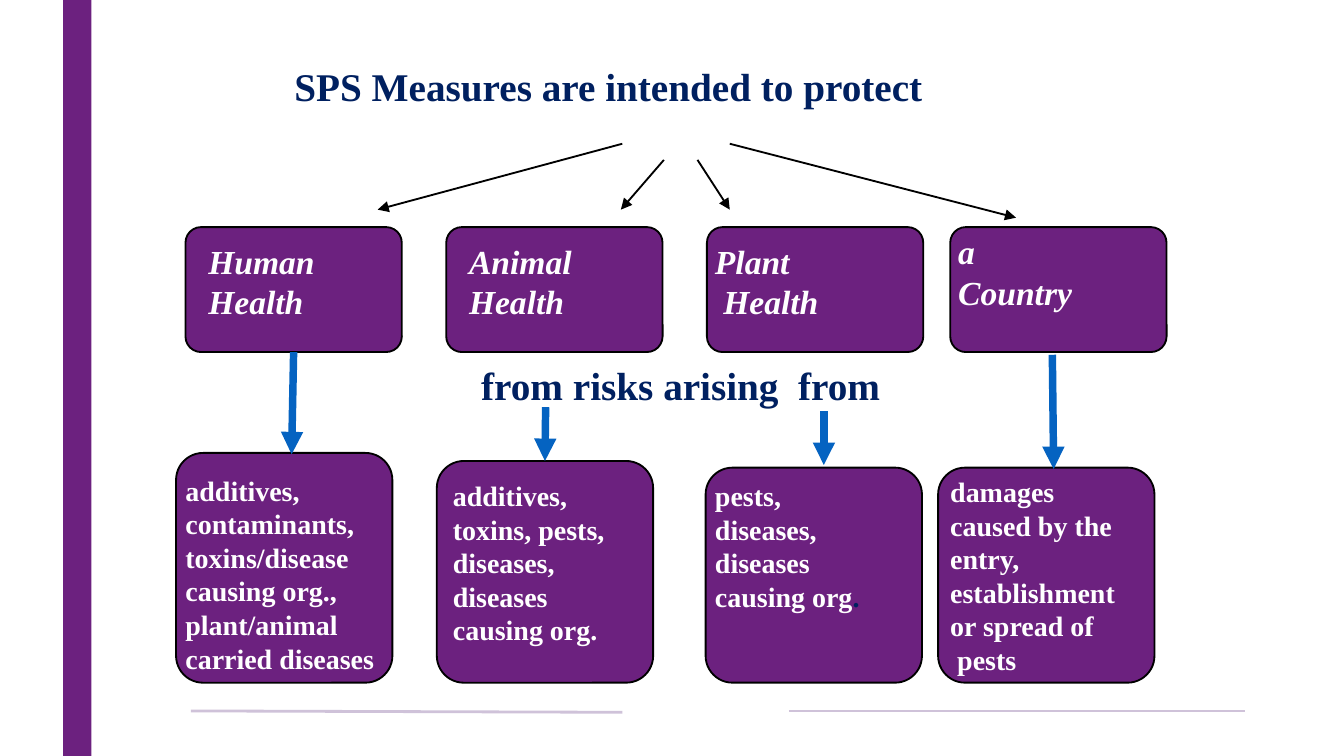
from lxml.etree import SubElement
from pptx import Presentation
from pptx.dml.color import RGBColor
from pptx.enum.shapes import MSO_CONNECTOR as CONN, MSO_SHAPE as SHAPE
from pptx.enum.text import MSO_ANCHOR as ANCHOR, MSO_AUTO_SIZE as FIT, PP_ALIGN as ALIGN
from pptx.oxml.ns import qn
from pptx.util import Inches, Pt

PURPLE, LILAC, BLUE = "6C217F", "CFC2D9", "0563C1"
NAVY, BLACK, WHITE = "002060", "000000", "FFFFFF"

prs = Presentation()
prs.slide_width, prs.slide_height = Inches(10), Inches(5.625)
slide = prs.slides.add_slide(prs.slide_layouts[5])
shapes = slide.shapes
unit = prs.slide_width / 100


def grid(*cells):
    return [round(c * unit) for c in cells]


def color(target, value):
    if hasattr(target, "solid"):
        target.solid()
        target = target.fore_color
    target.rgb = RGBColor.from_string(value)


def write(s, box, paragraphs, size, ink, italic=False):
    s.left, s.top, s.width, s.height = grid(*box)
    tf = s.text_frame
    tf.word_wrap, tf.auto_size, tf.vertical_anchor = True, FIT.NONE, ANCHOR.TOP
    tf.margin_left, tf.margin_right, tf.margin_top, tf.margin_bottom = grid(0.7, 0.7, 0.4, 0.4)
    for i, runs in enumerate(paragraphs):
        p = tf.paragraphs[0] if i == 0 else tf.add_paragraph()
        p.alignment, p.line_spacing = ALIGN.LEFT, Pt(size * 1.2)
        for text, c in runs:
            r = p.add_run()
            r.text = text
            r.font.name, r.font.size = "Times New Roman", Pt(size)
            r.font.bold, r.font.italic = True, italic
            color(r.font.color, c or ink)


def connect(ends, ink, width, arrow=True):
    line = shapes.add_connector(CONN.STRAIGHT, *grid(*ends))
    color(line.line.fill, ink)
    line.line.width = Pt(width)
    if arrow:
        SubElement(line.line._get_or_add_ln(), qn("a:tailEnd"), type="triangle")
    SubElement(line._element.spPr, qn("a:effectLst"))
    return line


bar = shapes.add_shape(SHAPE.RECTANGLE, *grid(4.7, 0, 2.1, 56.25))
bar.shadow.inherit = False
color(bar.fill, PURPLE)
bar.line.fill.background()
connect((46.3, 53, 14.2, 52.9), LILAC, 1.5, False)
connect((58.7, 52.9, 92.6, 52.9), LILAC, 1.5, False)

write(shapes.title, (21.2, 4.2, 73.8, 4.3),
      [[("SPS Measures are intended to protect", None)]], 21, NAVY)

cards = [
    ((13.8, 16.9, 9.3), (14.8, 17.5, 15.8, 6.8), 18, ["Human Health"]),
    ((33.2, 16.9, 9.3), (34.2, 17.5, 13.3, 6.8), 18, ["Animal Health"]),
    ((52.6, 16.9, 9.3), (52.5, 17.5, 16.3, 6.8), 18, ["Plant", " Health"]),
    ((70.7, 16.9, 9.3), (70.6, 16.8, 16.3, 6.8), 18, ["a", "Country"]),
    ((13.1, 33.7, 17.1), (13.1, 34.8, 17.4, 15.9), 15,
     ["additives,", "contaminants,", "toxins/disease causing org.,", "plant/animal carried diseases"]),
    ((32.5, 34.3, 16.5), (33, 35.2, 16.3, 13.4), 15,
     ["additives,", "toxins, pests,", "diseases,", "diseases", "causing org."]),
    ((52.5, 34.8, 16), (52.5, 35.2, 16.3, 10.8), 15,
     ["pests,", "diseases, diseases", "causing org"]),
    ((69.8, 34.8, 16), (70, 34.9, 15.8, 15.9), 15,
     ["damages", "caused by the entry,", "establishment", "or spread of", " pests"]),
]
boxes = []
for (x, y, h), box, size, lines in cards:
    sp = shapes.add_shape(SHAPE.ROUNDED_RECTANGLE, *grid(x, y, 16.1, h))
    sp.shadow.inherit = False
    sp.adjustments[0] = 0.125
    color(sp.fill, PURPLE)
    color(sp.line.fill, BLACK)
    sp.line.width = Pt(1)
    boxes.append(sp)
    paragraphs = [[(text, None)] for text in lines]
    if lines[-1] == "causing org":
        paragraphs[-1].append((".", NAVY))
    write(shapes.add_textbox(0, 0, 0, 0), box, paragraphs, size, WHITE, size == 18)

write(shapes.add_textbox(0, 0, 0, 0), (35.1, 26.5, 74.5 - 10, 4.3),
      [[("from risks arising  from", None)]], 21, NAVY)

for ends in [(46.3, 10.7, 28.1, 15.6), (49.4, 11.9, 46.2, 15.6),
             (51.9, 11.9, 54.3, 15.6), (54.3, 10.7, 75.6, 16.2)]:
    connect(ends, BLACK, 1)

human, animal, plant, country = [
    connect(ends, BLUE, 4)
    for ends in [(21.7, 26.4, 21.7, 33.8), (40.6, 30.3, 40.6, 34.4),
                 (61.3, 30.6, 61.3, 34.6), (78.3, 26.4, 78.4, 34.9)]
]
human.begin_connect(boxes[0], 2)
animal.end_connect(boxes[5], 0)

prs.save("out.pptx")
